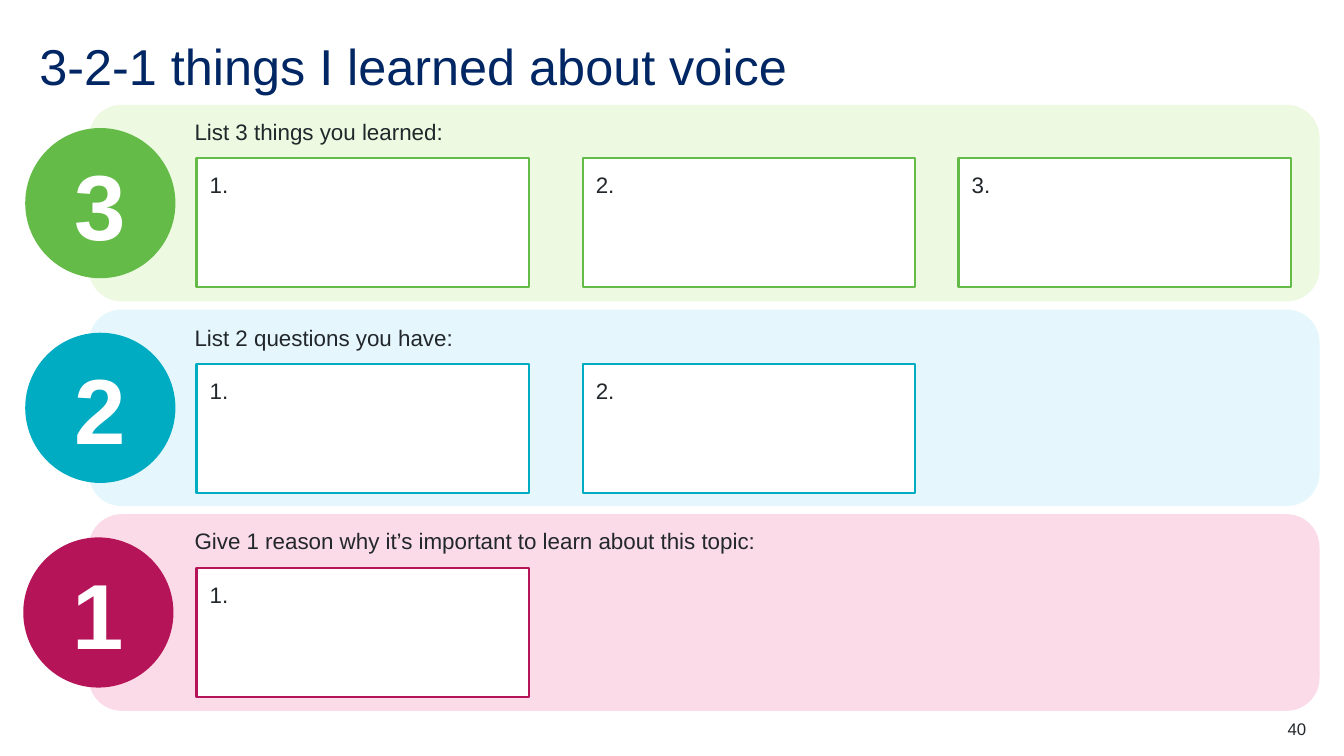
"""Build a 3-2-1 reflection slide with three coloured answer bands."""
from dataclasses import dataclass

from pptx import Presentation
from pptx.dml.color import RGBColor
from pptx.enum.shapes import MSO_SHAPE
from pptx.enum.text import MSO_ANCHOR, PP_ALIGN
from pptx.util import Pt

TITLE = "3-2-1 things I learned about voice"
PAGE_NUMBER = "40"
BANDS = [
    {"count": 3, "prompt": "List 3 things you learned:", "prompt_width": 344,
     "strong": "64BB47", "pale": "EDF9E0", "circle_left": 18, "nudge": 0},
    {"count": 2, "prompt": "List 2 questions you have:", "prompt_width": 344,
     "strong": "00ACC2", "pale": "E5F7FC", "circle_left": 18, "nudge": 1},
    {"count": 1, "prompt": "Give 1 reason why it’s important to learn about this topic:",
     "prompt_width": 479, "strong": "B51458", "pale": "FBDBE7", "circle_left": 16.6, "nudge": 0},
]


@dataclass(frozen=True)
class Theme:
    font: str = "Arial"
    navy: str = "002664"
    ink: str = "22272B"
    white: str = "FFFFFF"
    title: int = 36
    body: int = 16
    numeral: int = 66
    footer: int = 12
    outline: float = 1.5


THEME = Theme()
BAND_LEFT, BAND_TOP, BAND_WIDTH, BAND_HEIGHT = 63.4, 74.9, 879.1, 140.4
BAND_PITCH = 146.2
CIRCLE_SIZE = 107.3
PROMPT_LEFT, PROMPT_HEIGHT = 129.6, 44
ANSWER_LEFTS = (140.4, 416.2, 684.7)
ANSWER_DROP, ANSWER_WIDTH, ANSWER_HEIGHT = 38.1, 237.6, 92.2
PADDING = 9.4


def add_panel(page, kind, bounds, fill, outline=None):
    """Add a filled preset shape with an optional outline."""
    panel = page.shapes.add_shape(kind, *map(Pt, bounds))
    panel.shadow.inherit = False
    panel.fill.solid()
    panel.fill.fore_color.rgb = RGBColor.from_string(fill)
    if outline:
        panel.line.color.rgb = RGBColor.from_string(outline)
        panel.line.width = Pt(THEME.outline)
    else:
        panel.line.fill.background()
    return panel


def write(box, text, size, color, padding=0, align=PP_ALIGN.LEFT,
          anchor=MSO_ANCHOR.TOP, bold=False, spacing=1.0):
    """Put one formatted paragraph into a shape or text box."""
    frame = box.text_frame
    frame.text = text
    frame.word_wrap = True
    frame.vertical_anchor = anchor
    frame.margin_left = frame.margin_right = Pt(padding)
    frame.margin_top = frame.margin_bottom = Pt(padding)
    para = frame.paragraphs[0]
    para.alignment = align
    para.line_spacing = spacing
    font = para.runs[0].font
    font.name, font.size, font.bold = THEME.font, Pt(size), bold
    font.color.rgb = RGBColor.from_string(color)


def add_text(page, bounds, *content, **style):
    """Add a text box."""
    write(page.shapes.add_textbox(*map(Pt, bounds)), *content, **style)


def add_band(page, band, top):
    """Add one band with its prompt, answer boxes and numbered circle."""
    add_panel(page, MSO_SHAPE.ROUNDED_RECTANGLE,
              (BAND_LEFT, top, BAND_WIDTH, BAND_HEIGHT), band["pale"])
    content_top = top + band["nudge"]
    add_text(page, (PROMPT_LEFT, content_top, band["prompt_width"], PROMPT_HEIGHT),
             band["prompt"], THEME.body, THEME.ink, padding=PADDING)
    for number, left in enumerate(ANSWER_LEFTS[:band["count"]], start=1):
        answer = add_panel(page, MSO_SHAPE.RECTANGLE,
                           (left, content_top + ANSWER_DROP, ANSWER_WIDTH, ANSWER_HEIGHT),
                           THEME.white, band["strong"])
        write(answer, f"{number}.", THEME.body, THEME.ink, padding=PADDING)
    circle_top = top + (BAND_HEIGHT - CIRCLE_SIZE) / 2
    circle = add_panel(page, MSO_SHAPE.OVAL,
                       (band["circle_left"], circle_top, CIRCLE_SIZE, CIRCLE_SIZE),
                       band["strong"])
    write(circle, str(band["count"]), THEME.numeral, THEME.white,
          align=PP_ALIGN.CENTER, anchor=MSO_ANCHOR.MIDDLE, bold=True)


def main():
    """Assemble and save the deck."""
    deck = Presentation()
    deck.slide_width, deck.slide_height = Pt(960), Pt(540)
    page = deck.slides.add_slide(deck.slide_layouts[6])
    add_text(page, (28.1, 28.1, 904.3, 43.2), TITLE, THEME.title, THEME.navy,
             anchor=MSO_ANCHOR.MIDDLE, spacing=0.9)
    for index, band in enumerate(BANDS):
        add_band(page, band, BAND_TOP + index * BAND_PITCH)
    add_text(page, (876.2, 513.4, 56.9, 14.4), PAGE_NUMBER, THEME.footer, THEME.ink,
             align=PP_ALIGN.RIGHT)
    deck.save("out.pptx")


if __name__ == "__main__":
    main()
